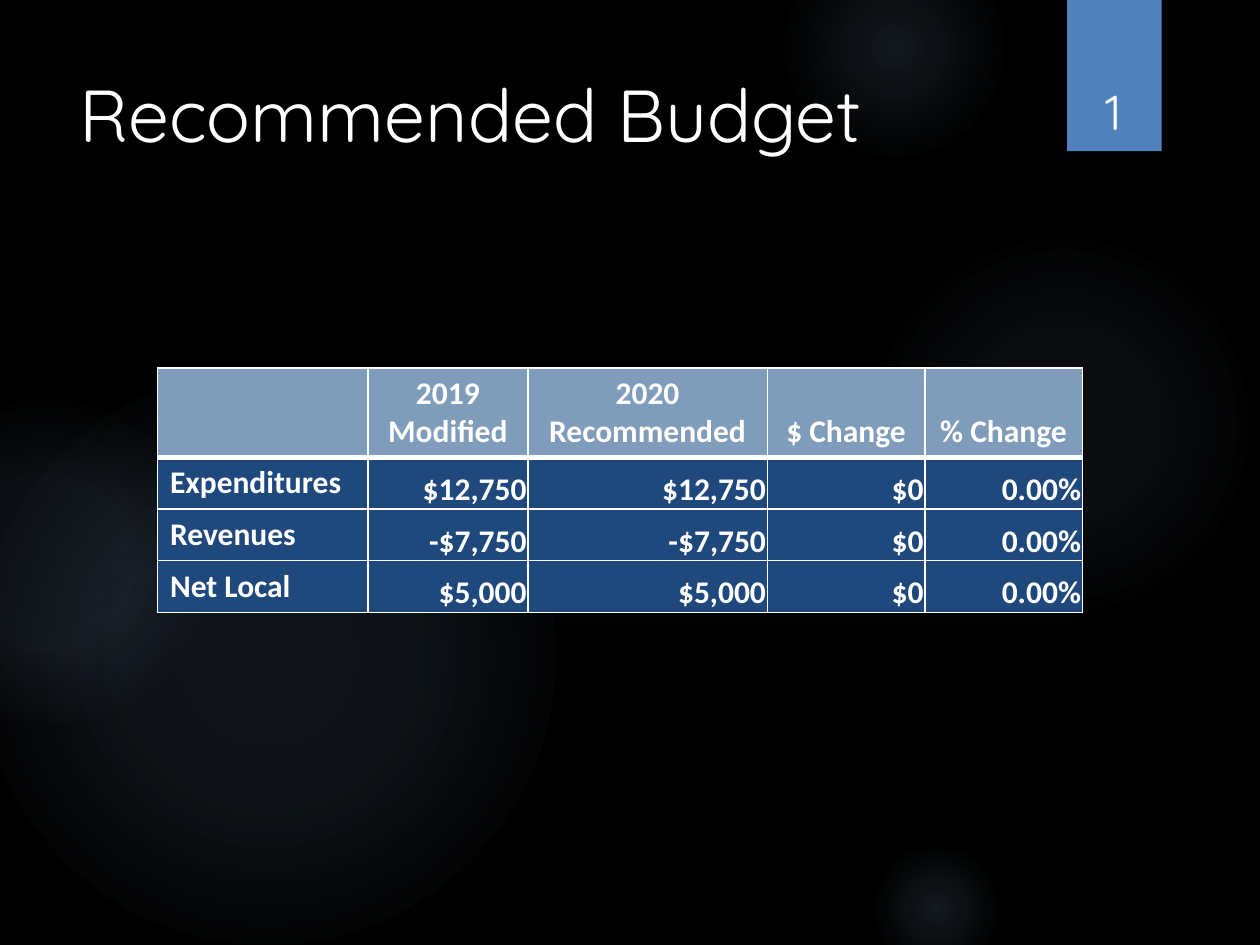
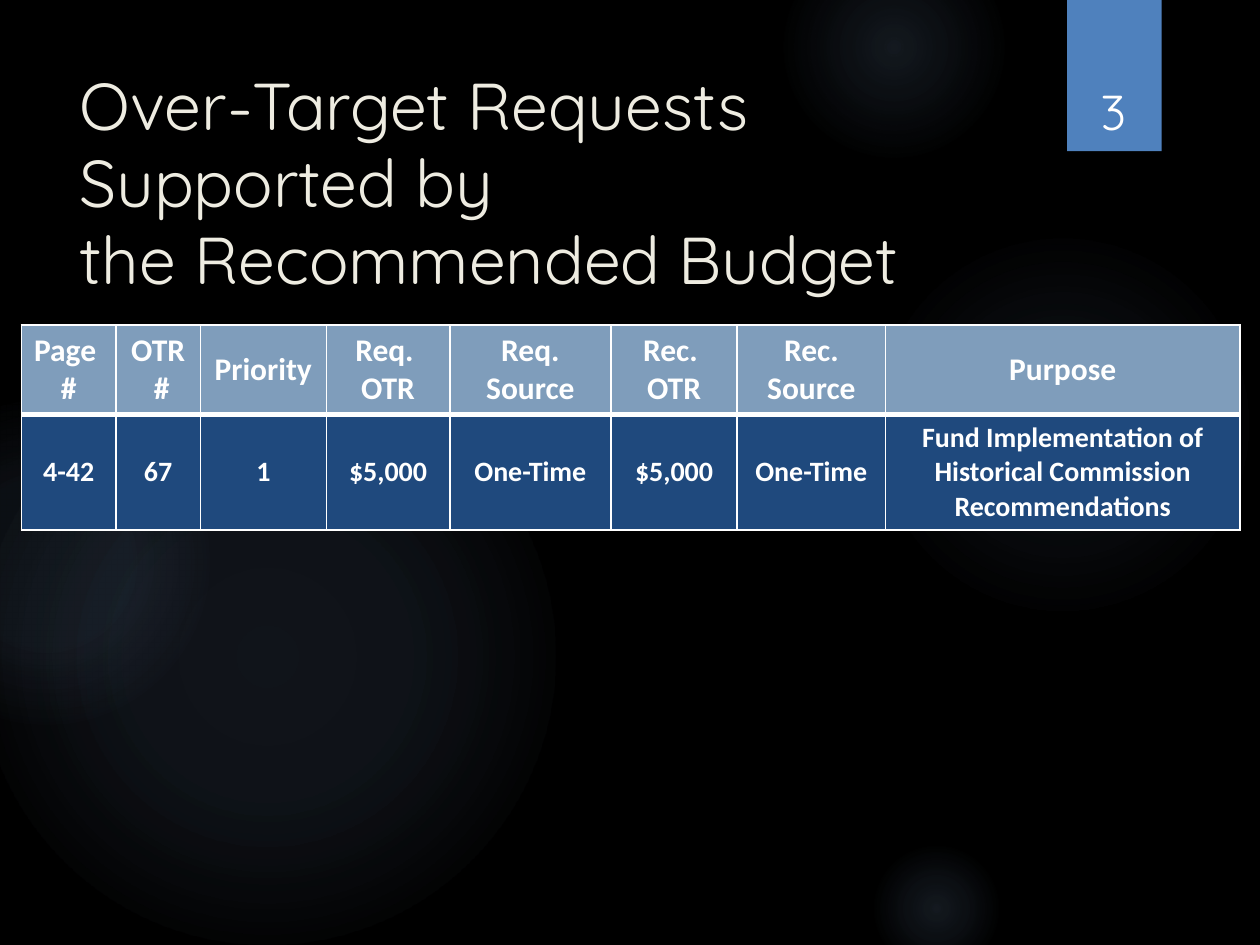
from copy import deepcopy

from lxml import etree
from pptx import Presentation
from pptx.dml.color import RGBColor as RGB
from pptx.enum.shapes import MSO_SHAPE as Kind
from pptx.enum.text import MSO_ANCHOR as Anchor, PP_ALIGN as Align
from pptx.oxml.ns import qn
from pptx.util import Inches, Pt

COLORS = {
    "black": "000000", "white": "FFFFFF", "cream": "EEECE1",
    "glow": "8EB4E3", "tab": "4F81BD", "head": "7F9DBB", "body": "1F497D",
}
FONTS = {"title": "Quicksand", "table": "Calibri"}

# left, top, size, then (position, opacity) of each gradient stop, in percent
GLOWS = [
    (6.89, 1.83, 3.08, ((0, 7), (36, 6), (69, 0))),
    (6.22, -0.5, 1.75, ((0, 14), (36, 7), (73, 0))),
    (6.89, 6.67, 1.08, ((0, 14), (36, 7), (66, 0))),
    (-0.17, 2.92, 4.58, ((0, 11), (36, 10), (75, 0))),
    (-0.92, 3.17, 2.58, ((0, 8), (36, 8), (72, 0))),
]
TAB = (8.47, 0, 0.75, 1.2)
TITLE = (0.53, 0.5, 7.72, 1.53)
NUMBER = (8.49, 0.32, 0.69, 0.84)

LABEL = dict(anchor=Anchor.TOP, align=Align.LEFT)
MONEY = dict(anchor=Anchor.BOTTOM, align=Align.RIGHT, pad=(0.01, 0.01, 0.01, 0))
MIDDLE = dict(anchor=Anchor.MIDDLE, align=Align.CENTER)

SLIDES = [
    dict(
        title="Recommended Budget", number="1",
        style=dict(size=42, color="white"),
        spot=(1.25, 2.92),
        cols=[1.67, 1.27, 1.9, 1.25, 1.25], rows=[0.71, 0.41, 0.41, 0.41],
        head=dict(anchor=Anchor.BOTTOM, align=Align.CENTER),
        first=LABEL, rest=MONEY, size=18,
        cells=[
            ["", "2019\nModified", "2020\nRecommended", "$ Change", "% Change"],
            ["Expenditures", "$12,750", "$12,750", "$0", "0.00%"],
            ["Revenues", "-$7,750", "-$7,750", "$0", "0.00%"],
            ["Net Local", "$5,000", "$5,000", "$0", "0.00%"],
        ],
    ),
    dict(
        title="Over-Target Requests Supported by \vthe Recommended Budget",
        number="3",
        style=dict(size=37.8, color="cream", spacing=0.97),
        spot=(0.17, 2.58),
        cols=[0.75, 0.67, 1, 0.98, 1.28, 1, 1.18, 2.81], rows=[0.71, 0.91],
        head=MIDDLE, first=MIDDLE, rest=MIDDLE, size=16,
        cells=[
            ["Page \n#", "OTR\n #", "Priority", "Req. \nOTR", "Req. Source",
             "Rec. \nOTR", "Rec. Source", "Purpose"],
            ["4-42", "67", "1", "$5,000", "One-Time", "$5,000", "One-Time",
             "Fund Implementation of Historical Commission Recommendations"],
        ],
    ),
]


def rgb(name):
    return RGB.from_string(COLORS[name])


def write(frame, text, size=18, font="title", color="white", bold=False,
          align=Align.LEFT, spacing=None):
    frame.text = text
    for para in frame.paragraphs:
        para.alignment = align
        para.line_spacing = spacing
        for run in para.runs:
            run.font.size = Pt(size)
            run.font.name = FONTS[font]
            run.font.bold = bold
            run.font.color.rgb = rgb(color)
        for brk in para._p.findall(qn("a:br")):
            brk.insert(0, deepcopy(para.runs[0]._r.rPr))


def node(up, tag, **attrs):
    """Add an XML child in the drawing namespace."""
    return etree.SubElement(up, qn("a:" + tag), {k: str(v) for k, v in attrs.items()})


def draw(slide, kind, box):
    shape = slide.shapes.add_shape(kind, *map(Inches, box))
    shape.shadow.inherit = False
    shape.line.fill.background()
    return shape


def glow(slide, left, top, size, stops):
    shape = draw(slide, Kind.OVAL, (left, top, size, size))
    shape.fill.background()
    props = shape.element.spPr
    grad = node(props, "gradFill", rotWithShape=1)
    marks = node(grad, "gsLst")
    for pos, alpha in stops:
        mark = node(marks, "gs", pos=pos * 1000)
        tint = node(mark, "srgbClr", val=COLORS["glow"])
        node(tint, "alpha", val=alpha * 1000)
    ring = node(grad, "path", path="circle")
    node(ring, "fillToRect", l=50000, t=50000, r=50000, b=50000)
    props.replace(props.find(qn("a:noFill")), grad)
    return shape


def share(slide):
    """Move the glows and the number tab to the slide's layout."""
    parts = [glow(slide, *item) for item in GLOWS]
    tab = draw(slide, Kind.RECTANGLE, TAB)
    tab.fill.solid()
    tab.fill.fore_color.rgb = rgb("tab")
    tree = slide.slide_layout.shapes.element
    for i, part in enumerate(parts + [tab]):
        part.element.nvSpPr.cNvPr.set("id", str(100 + i))
        tree.insert(2 + i, part.element)


def edge(cell, top, bottom):
    props = cell._tc.get_or_add_tcPr()
    for side, width in zip("LRTB", (1, 1, top, bottom)):
        line = node(props, "ln" + side, w=Pt(width))
        node(node(line, "solidFill"), "srgbClr", val=COLORS["white"])


def fill_cell(cell, text, row, size, anchor, align, pad=(0.1, 0.05, 0.1, 0.05)):
    edge(cell, 3 if row == 1 else 1, 3 if row == 0 else 1)
    cell.fill.solid()
    cell.fill.fore_color.rgb = rgb("body" if row else "head")
    cell.vertical_anchor = anchor
    (cell.margin_left, cell.margin_top,
     cell.margin_right, cell.margin_bottom) = map(Inches, pad)
    write(cell.text_frame, text, size=size, font="table", bold=True, align=align)


def add_grid(slide, page):
    cols, rows = page["cols"], page["rows"]
    box = (*page["spot"], sum(cols), sum(rows))
    table = slide.shapes.add_table(len(rows), len(cols), *map(Inches, box)).table
    for col, width in zip(table.columns, cols):
        col.width = Inches(width)
    for r, height in enumerate(rows):
        table.rows[r].height = Inches(height)
        for c, text in enumerate(page["cells"][r]):
            look = page["head"] if r == 0 else page["rest"] if c else page["first"]
            size = page["size"] if r else 18
            fill_cell(table.cell(r, c), text, r, size, **look)


def add_title(slide, page):
    title = slide.shapes.title
    title.left, title.top, title.width, title.height = map(Inches, TITLE)
    title.text_frame.vertical_anchor = Anchor.TOP
    write(title.text_frame, page["title"], **page["style"])


def add_number(slide, text):
    frame = slide.shapes.add_textbox(*map(Inches, NUMBER)).text_frame
    frame.word_wrap = True
    frame.vertical_anchor = Anchor.BOTTOM
    write(frame, text, size=28, align=Align.CENTER)


def main():
    prs = Presentation()
    prs.slide_width, prs.slide_height = Inches(10), Inches(7.5)
    back = prs.slide_master.background.fill
    back.solid()
    back.fore_color.rgb = rgb("black")
    for i, page in enumerate(SLIDES):
        slide = prs.slides.add_slide(prs.slide_layouts[5])
        if i == 0:
            share(slide)
        add_title(slide, page)
        add_grid(slide, page)
        add_number(slide, page["number"])
    prs.save("out.pptx")


if __name__ == "__main__":
    main()
